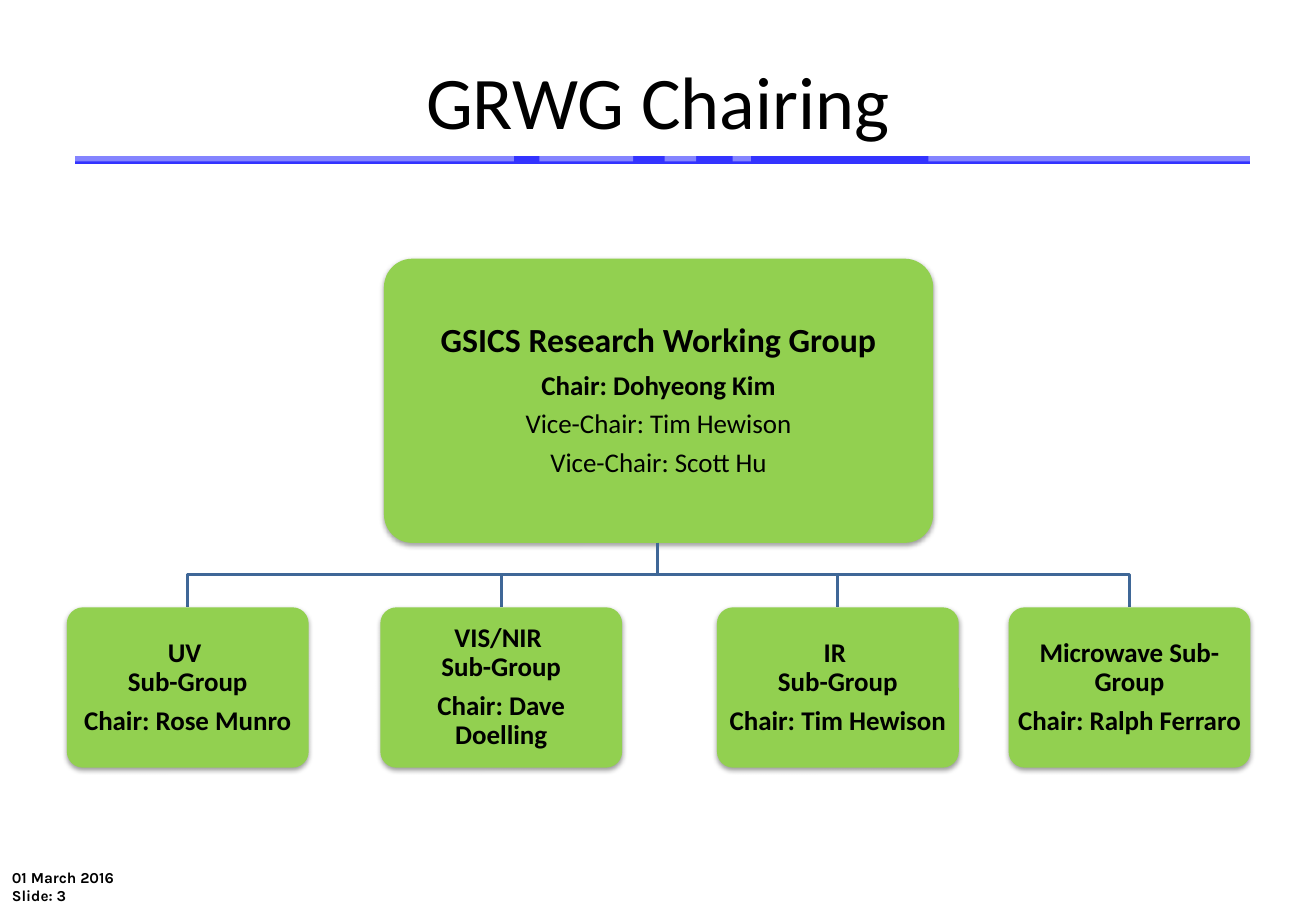
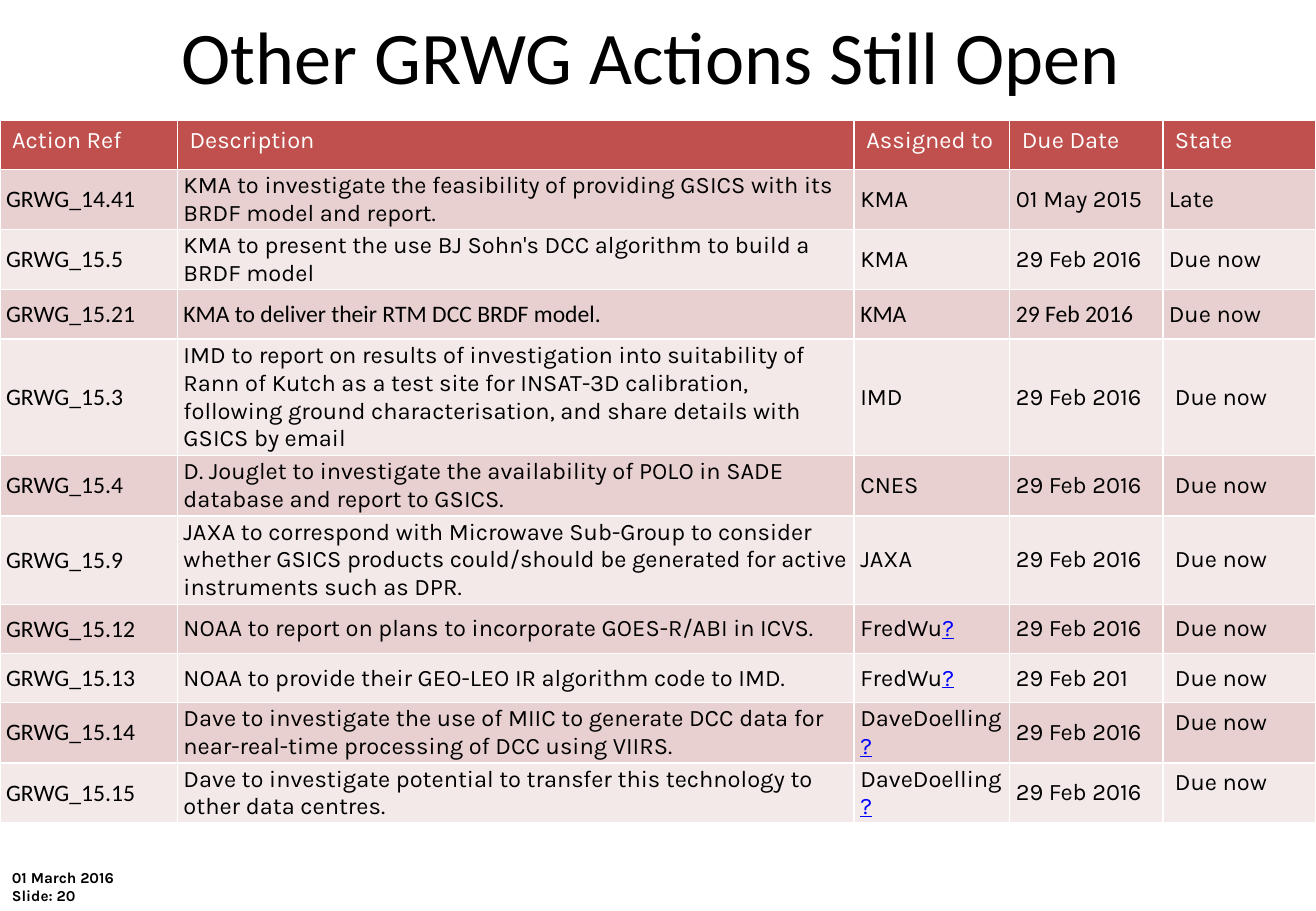
"""Build two slides on the GRWG: its chairing and its open actions."""
from dataclasses import dataclass
from lxml import etree
from pptx import Presentation, util as u
from pptx.dml.color import RGBColor
from pptx.enum import shapes, text
from pptx.oxml import ns, parse_xml

Inches = u.Inches


@dataclass(frozen=True)
class Theme:
    heading: str = "Calibri"
    body: str = "Karla"
    black: RGBColor = RGBColor(0, 0, 0)
    white: RGBColor = RGBColor(255, 255, 255)
    rule: RGBColor = RGBColor.from_string("3333FF")
    green: RGBColor = RGBColor.from_string("92D050")
    branch: RGBColor = RGBColor.from_string("3F6797")
    header: RGBColor = RGBColor.from_string("C0504D")
    bands: tuple = (RGBColor.from_string("E8D0D0"), RGBColor.from_string("F4E9E9"))
    link: RGBColor = RGBColor.from_string("0000FF")
    title_size: int = 44
    group_size: int = 20
    chair_size: int = 16
    table_size: int = 14
    footer_size: int = 9


theme = Theme()
DRAWING = f'xmlns:a="{ns.nsuri("a")}"'


def style(font, name, size, color, bold=False):
    font.name, font.size, font.bold = name, u.Pt(size), bold
    font.color.rgb = color


def add_group_box(page, left, top, width, height, lines):
    box = page.shapes.add_shape(shapes.MSO_SHAPE.ROUNDED_RECTANGLE, Inches(left), Inches(top),
                                Inches(width), Inches(height))
    box.adjustments[0] = 0.1
    box.fill.solid()
    box.fill.fore_color.rgb = theme.green
    box.line.fill.background()
    box._element.spPr.append(parse_xml(
        f'<a:effectLst {DRAWING}><a:outerShdw blurRad="40000" dist="20000" dir="5400000" '
        'rotWithShape="0"><a:srgbClr val="000000"><a:alpha val="38000"/></a:srgbClr>'
        '</a:outerShdw></a:effectLst>'))
    frame = box.text_frame
    frame.word_wrap = True
    frame.vertical_anchor = text.MSO_ANCHOR.MIDDLE
    frame.margin_left = frame.margin_right = Inches(0.03)
    for index, (words, size, bold) in enumerate(lines):
        para = frame.paragraphs[0] if index == 0 else frame.add_paragraph()
        para.text = words
        para.alignment = text.PP_ALIGN.CENTER
        para.line_spacing = 0.9
        para.space_after = u.Pt(round(size * 0.35, 1))
        style(para.font, theme.heading, size, theme.black, bold)


deck = Presentation()
deck.slide_width, deck.slide_height = Inches(10.83), Inches(7.5)
layout = deck.slide_layouts[5]
pages = []
for heading, number, place in (
    ("GRWG Chairing", 3, (0.54, 0.3, 9.75, 1.04)),
    ("Other GRWG Actions Still Open", 20, (0, -0.01, 10.72, 0.93)),
):
    page = deck.slides.add_slide(layout)
    pages.append(page)
    title = page.shapes.title
    title.left, title.top, title.width, title.height = map(Inches, place)
    title.text_frame.text = heading
    title.text_frame.vertical_anchor = text.MSO_ANCHOR.MIDDLE
    para = title.text_frame.paragraphs[0]
    para.alignment = text.PP_ALIGN.CENTER
    style(para.font, theme.heading, theme.title_size, theme.black)

    footer = page.shapes.add_textbox(0, Inches(7.1), Inches(6.86), Inches(0.4)).text_frame
    footer.word_wrap = True
    footer.text = f"01 March 2016\nSlide: {number}"
    for para in footer.paragraphs:
        style(para.font, theme.body, theme.footer_size, theme.black, True)

chairing, actions = pages

rule = chairing.shapes.add_connector(shapes.MSO_CONNECTOR.STRAIGHT, Inches(0.62), Inches(1.32),
                                     Inches(10.29), Inches(1.32))
rule.line.color.rgb = theme.rule
rule.line.width = u.Pt(4.5)
etree.SubElement(rule._element.spPr, ns.qn("a:effectLst"))
layout.shapes._spTree.append(rule._element)
for left, width in ((0.01, 4.22), (4.44, 0.77), (5.47, 0.26), (6.03, 0.15), (7.64, 3.19)):
    veil = chairing.shapes.add_shape(shapes.MSO_SHAPE.RECTANGLE, Inches(left), Inches(1.19),
                                     Inches(width), Inches(0.14))
    veil.shadow.inherit = False
    veil.line.fill.background()
    veil.fill.solid()
    veil.fill.fore_color.rgb = theme.white
    color = veil._element.spPr.find(".//" + ns.qn("a:srgbClr"))
    etree.SubElement(color, ns.qn("a:alpha"), val="40000")
    layout.shapes._spTree.append(veil._element)

trunk, root_bottom, bus, group_top = 5.41, 4.47, 4.73, 5
group_width = 1.99
add_group_box(chairing, 3.16, 2.13, 4.52, 2.34, (
    ("GSICS Research Working Group", theme.group_size, True),
    ("Chair: Dohyeong Kim", theme.chair_size, True),
    ("Vice-Chair: Tim Hewison", theme.chair_size, False),
    ("Vice-Chair: Scott Hu", theme.chair_size, False),
))
for left, group, chair in (
    (0.55, "UV \vSub-Group", "Rose Munro"),
    (3.13, "VIS/NIR \vSub-Group", "Dave Doelling"),
    (5.9, "IR \vSub-Group", "Tim Hewison"),
    (8.3, "Microwave Sub-Group", "Ralph Ferraro"),
):
    center = left + group_width / 2
    outline = chairing.shapes.build_freeform(Inches(trunk), Inches(root_bottom))
    outline.add_line_segments(
        [(Inches(x), Inches(y)) for x, y in ((trunk, bus), (center, bus), (center, group_top))],
        close=False)
    branch = outline.convert_to_shape()
    branch.shadow.inherit = False
    branch.fill.background()
    branch.line.color.rgb = theme.branch
    branch.line.width = u.Pt(2)
    add_group_box(chairing, left, group_top, group_width, 1.32, (
        (group, theme.chair_size, True), (f"Chair: {chair}", theme.chair_size, True)))

rows = (
    ("Action Ref", "Description", "Assigned to", "Due Date", "State"),
    ("GRWG_14.41", "KMA to investigate the feasibility of providing GSICS with its BRDF model "
     "and report.", "KMA", "01 May 2015", "Late"),
    ("GRWG_15.5", "KMA to present the use BJ Sohn's DCC algorithm to build a BRDF model",
     "KMA", "29 Feb 2016", "Due now"),
    ("GRWG_15.21", "KMA to deliver their RTM DCC BRDF model.", "KMA", "29 Feb 2016", "Due now"),
    ("GRWG_15.3", "IMD to report on results of investigation into suitability of Rann of Kutch "
     "as a test site for INSAT-3D calibration, following ground characterisation, and share "
     "details with GSICS by email", "IMD", "29 Feb 2016", "Due now"),
    ("GRWG_15.4", "D. Jouglet to investigate the availability of POLO in SADE database and "
     "report to GSICS.", "CNES", "29 Feb 2016", "Due now"),
    ("GRWG_15.9", "JAXA to correspond with Microwave Sub-Group to consider whether GSICS "
     "products could/should be generated for active instruments such as DPR.",
     "JAXA", "29 Feb 2016", "Due now"),
    ("GRWG_15.12", "NOAA to report on plans to incorporate GOES-R/ABI in ICVS.",
     "FredWu?", "29 Feb 2016", "Due now"),
    ("GRWG_15.13", "NOAA to provide their GEO-LEO IR algorithm code to IMD.",
     "FredWu?", "29 Feb 201", "Due now"),
    ("GRWG_15.14", "Dave to investigate the use of MIIC to generate DCC data for near-real-time "
     "processing of DCC using VIIRS.", "DaveDoelling?", "29 Feb 2016", "Due now"),
    ("GRWG_15.15", "Dave to investigate potential to transfer this technology to other data "
     "centres.", "DaveDoelling?", "29 Feb 2016", "Due now"),
)
widths = (1.46, 5.57, 1.28, 1.26, 1.26)
least_height = 4.46
state = len(widths) - 1
table = actions.shapes.add_table(len(rows), len(widths), 0, Inches(0.99), Inches(sum(widths)),
                                 Inches(least_height)).table
table.first_row = table.horz_banding = False
for column, width in zip(table.columns, widths):
    column.width = Inches(width)
for r, row in enumerate(rows):
    table.rows[r].height = Inches(least_height / len(rows))
    for c, words in enumerate(row):
        cell = table.cell(r, c)
        is_header = r == 0
        is_indented_state = c == state and r >= 4
        if not is_header and not is_indented_state:
            cell.margin_left = cell.margin_right = Inches(0.05)
            cell.margin_top = cell.margin_bottom = u.Pt(1)
        is_top = is_header or (c == state and r >= len(rows) - 2)
        cell.vertical_anchor = text.MSO_ANCHOR.TOP if is_top else text.MSO_ANCHOR.MIDDLE
        for side in "LRTB":
            cell._tc.get_or_add_tcPr().append(parse_xml(
                f'<a:ln{side} {DRAWING} w="12700"><a:solidFill><a:srgbClr val="{theme.white}"/>'
                f'</a:solidFill></a:ln{side}>'))
        cell.fill.solid()
        cell.fill.fore_color.rgb = theme.header if is_header else theme.bands[(r - 1) % 2]
        para = cell.text_frame.paragraphs[0]
        para.add_run().text = words.rstrip("?")
        is_calibri = not is_header and (c == 0 or (row[0] == "GRWG_15.21" and c < state))
        style(para.font, theme.heading if is_calibri else theme.body, theme.table_size,
              theme.white if is_header else theme.black)
        if words.endswith("?"):
            span = para.add_run()
            span.text = "?"
            span.font.underline = True
            span.font.color.rgb = theme.link

deck.save("out.pptx")
